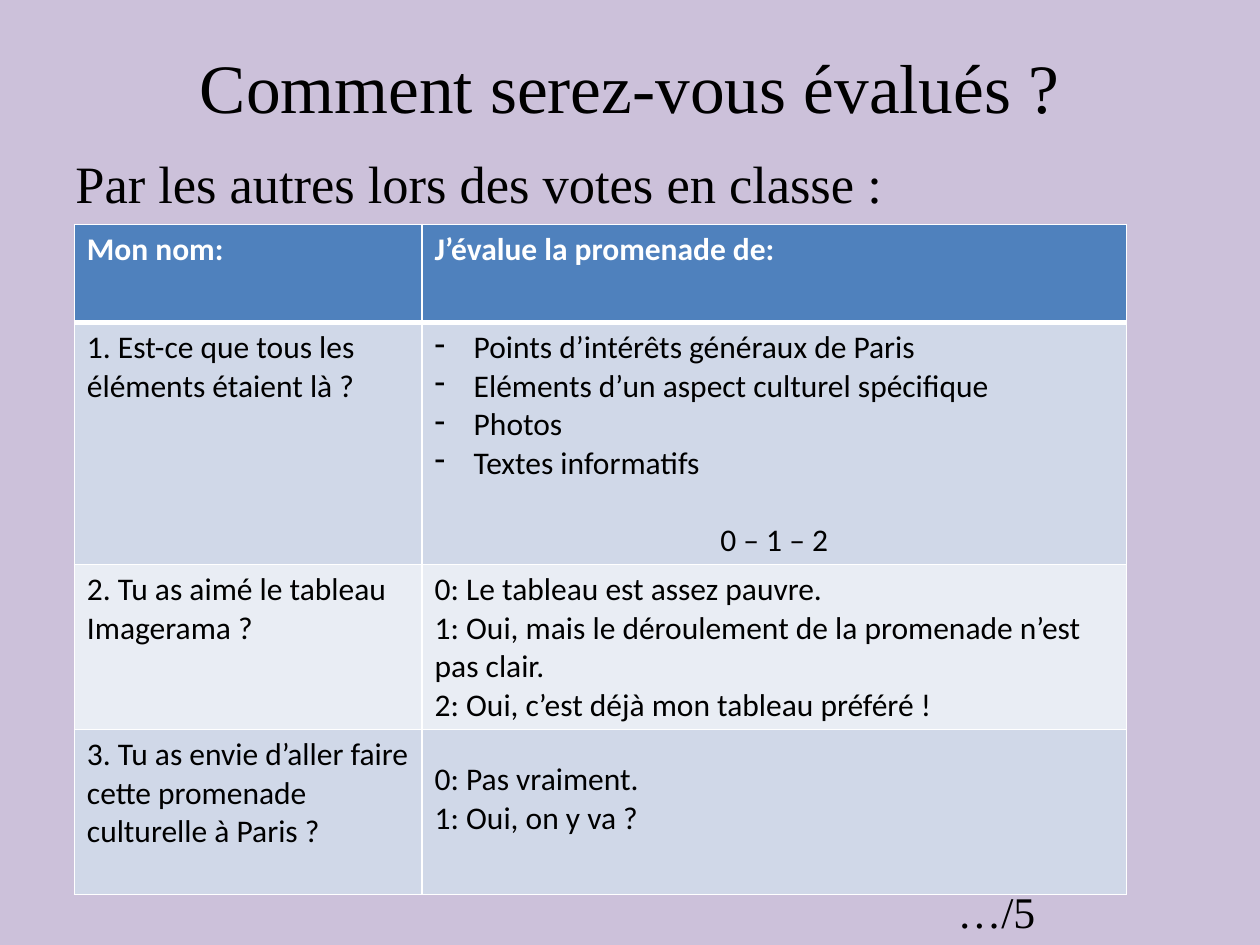
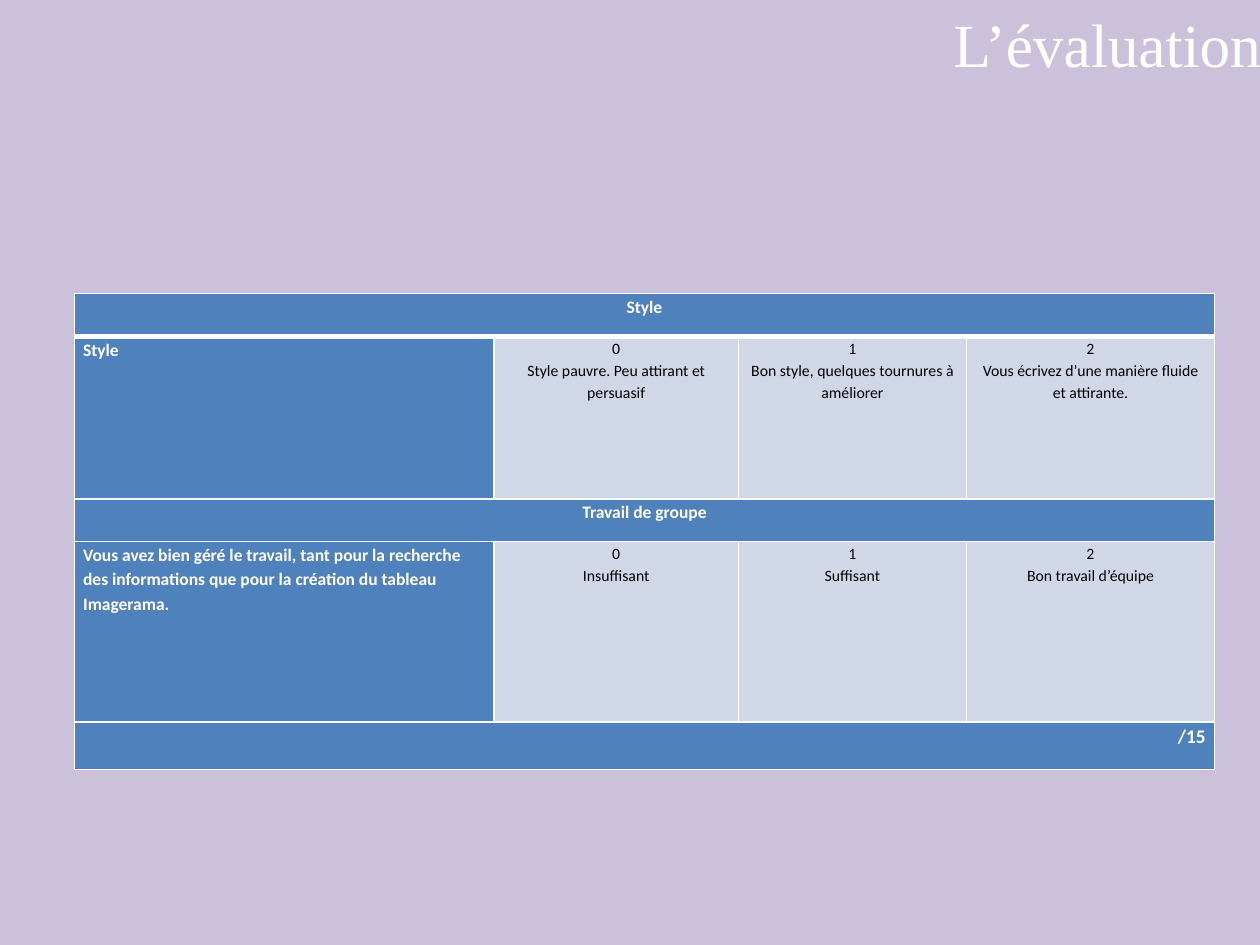
import pptx
import pptx.util
import pptx.dml.color
import pptx.enum.text
import pptx.oxml.ns
from lxml import etree

Inches = pptx.util.Inches
Pt = pptx.util.Pt
RGBColor = pptx.dml.color.RGBColor
LEFT = pptx.enum.text.PP_ALIGN.LEFT
CENTER = pptx.enum.text.PP_ALIGN.CENTER
RIGHT = pptx.enum.text.PP_ALIGN.RIGHT
TOP = pptx.enum.text.MSO_ANCHOR.TOP
MIDDLE = pptx.enum.text.MSO_ANCHOR.MIDDLE
qn = pptx.oxml.ns.qn

LILAC = RGBColor(0xCC, 0xC1, 0xDA)
BLUE = RGBColor(0x4F, 0x81, 0xBD)
BAND_DARK = RGBColor(0xD0, 0xD8, 0xE8)
BAND_LIGHT = RGBColor(0xE9, 0xED, 0xF4)
WHITE = RGBColor(0xFF, 0xFF, 0xFF)
BLACK = RGBColor(0x00, 0x00, 0x00)
TITLE_FONT = "Times New Roman"
TABLE_FONT = "Calibri"


def write_lines(frame, lines, size, color, font, bold=False, align=LEFT, spacing=None):
    """Write one paragraph with one run for each line."""
    for index, line in enumerate(lines):
        paragraph = frame.add_paragraph() if index else frame.paragraphs[0]
        paragraph.alignment = align
        if spacing:
            paragraph.line_spacing = spacing
        run = paragraph.add_run()
        run.text = line
        run.font.size = Pt(size)
        run.font.name = font
        run.font.bold = bold
        run.font.color.rgb = color


def add_grid(slide, left, top, widths, heights):
    """Add a table with white borders and a thick line under its first row."""
    shape = slide.shapes.add_table(len(heights), len(widths), Inches(left), Inches(top),
                                   Inches(sum(widths)), Inches(sum(heights)))
    table = shape.table
    for column, width in zip(table.columns, widths):
        column.width = Inches(width)
    for row_index, (row, height) in enumerate(zip(table.rows, heights)):
        row.height = Inches(height)
        for cell in row.cells:
            properties = cell._tc.get_or_add_tcPr()
            for side in "LRTB":
                thick = (row_index, side) in ((0, "B"), (1, "T"))
                line = etree.SubElement(properties, qn(f"a:ln{side}"), w=str(Pt(3 if thick else 1)))
                fill = etree.SubElement(line, qn("a:solidFill"))
                etree.SubElement(fill, qn("a:srgbClr"), val=str(WHITE))
    return table


presentation = pptx.Presentation()
presentation.slide_width = Inches(10)
presentation.slide_height = Inches(7.5)
background = presentation.slide_master.background.fill
background.solid()
background.fore_color.rgb = LILAC
blank_layout = presentation.slide_layouts[6]
vote_slide = presentation.slides.add_slide(blank_layout)
grading_slide = presentation.slides.add_slide(blank_layout)

# Titles and free text: slide, box, text, size, colour, alignment, anchor, left margin
text_boxes = [
    (vote_slide, (0.5, 0.3, 9, 0.77), "Comment serez-vous évalués ?", 39.6, BLACK, CENTER, MIDDLE, 0.1),
    (vote_slide, (0.5, 1.15, 9, 5.55), "Par les autres lors des votes en classe :", 30, BLACK, LEFT, TOP, 0.1),
    (vote_slide, (6.5, 6.97, 3.11, 0.52), "…/5", 25, BLACK, LEFT, TOP, 1.1),
    (grading_slide, (7.47, 0, 2.68, 0.69), "L’évaluation", 35, WHITE, LEFT, TOP, 0.1),
]
for slide, box, text, size, color, align, anchor, margin in text_boxes:
    frame = slide.shapes.add_textbox(*map(Inches, box)).text_frame
    frame.word_wrap = True
    frame.vertical_anchor = anchor
    frame.margin_left = Inches(margin)
    write_lines(frame, [text], size, color, TITLE_FONT, align=align)

# Slide 1: voting form
vote_rows = [
    (BLUE, ["Mon nom:"], ["J’évalue la promenade de:"]),
    (BAND_DARK, ["1. Est-ce que tous les éléments étaient là ?"],
     ["Points d’intérêts généraux de Paris", "Eléments d’un aspect culturel spécifique",
      "Photos", "Textes informatifs", "0 – 1 – 2"]),
    (BAND_LIGHT, ["2. Tu as aimé le tableau Imagerama ?"],
     ["0: Le tableau est assez pauvre.",
      "1: Oui, mais le déroulement de la promenade n’est pas clair.",
      "2: Oui, c’est déjà mon tableau préféré !"]),
    (BAND_DARK, ["3. Tu as envie d’aller faire cette promenade culturelle à Paris ?"],
     ["0: Pas vraiment.", "1: Oui, on y va ?"]),
]
vote_table = add_grid(vote_slide, 0.59, 1.78, [2.76, 5.59], [0.78, 1.92, 1.31, 1.31])
for row, (fill_color, *contents) in zip(vote_table.rows, vote_rows):
    is_header = fill_color == BLUE
    for cell, lines in zip(row.cells, contents):
        cell.fill.solid()
        cell.fill.fore_color.rgb = fill_color
        write_lines(cell.text_frame, lines, 18, WHITE if is_header else BLACK, TABLE_FONT, is_header)

*elements, score = vote_table.cell(1, 1).text_frame.paragraphs
for paragraph in elements:
    properties = paragraph._p.get_or_add_pPr()
    properties.set("marL", str(Inches(0.31)))
    properties.set("indent", str(-Inches(0.31)))
    etree.SubElement(properties, qn("a:buChar"), char="-")
score.alignment = CENTER
score.space_before = Pt(22)
vote_table.cell(3, 1).margin_top = Inches(0.25)

# Slide 2: grading scale; a row with a single cell spans the table
grading_rows = [
    [["Style"]],
    [["Style"], ["0", "Style pauvre. Peu attirant et persuasif"],
     ["1", "Bon style, quelques tournures à améliorer"],
     ["2", "Vous écrivez d’une manière fluide et attirante."]],
    [["Travail de groupe"]],
    [["Vous avez bien géré le travail, tant pour la recherche des informations "
      "que pour la création du tableau Imagerama."],
     ["0", "Insuffisant"], ["1", "Suffisant"], ["2", "Bon travail d’équipe"]],
    [["/15"]],
]
grading_table = add_grid(grading_slide, 0.59, 2.33, [3.33, 1.94, 1.81, 1.97],
                         [0.34, 1.29, 0.34, 1.43, 0.38])
for row_index, contents in enumerate(grading_rows):
    is_band = len(contents) == 1
    is_total = row_index == len(grading_rows) - 1
    for column_index in range(4):
        cell = grading_table.cell(row_index, column_index)
        is_heading = is_band or column_index == 0
        cell.margin_left = cell.margin_right = Inches(0.07)
        cell.margin_top = cell.margin_bottom = 0
        cell.fill.solid()
        cell.fill.fore_color.rgb = BLUE if is_heading else BAND_DARK
        if column_index >= len(contents):
            continue
        size = 11 if is_total else 10 if is_heading else 9
        align = RIGHT if is_total else CENTER if is_band or column_index else LEFT
        write_lines(cell.text_frame, contents[column_index], size, WHITE if is_heading else BLACK,
                    TABLE_FONT, is_heading, align, 1.15)
    if is_band:
        grading_table.cell(row_index, 0).merge(grading_table.cell(row_index, 3))

presentation.save("out.pptx")
